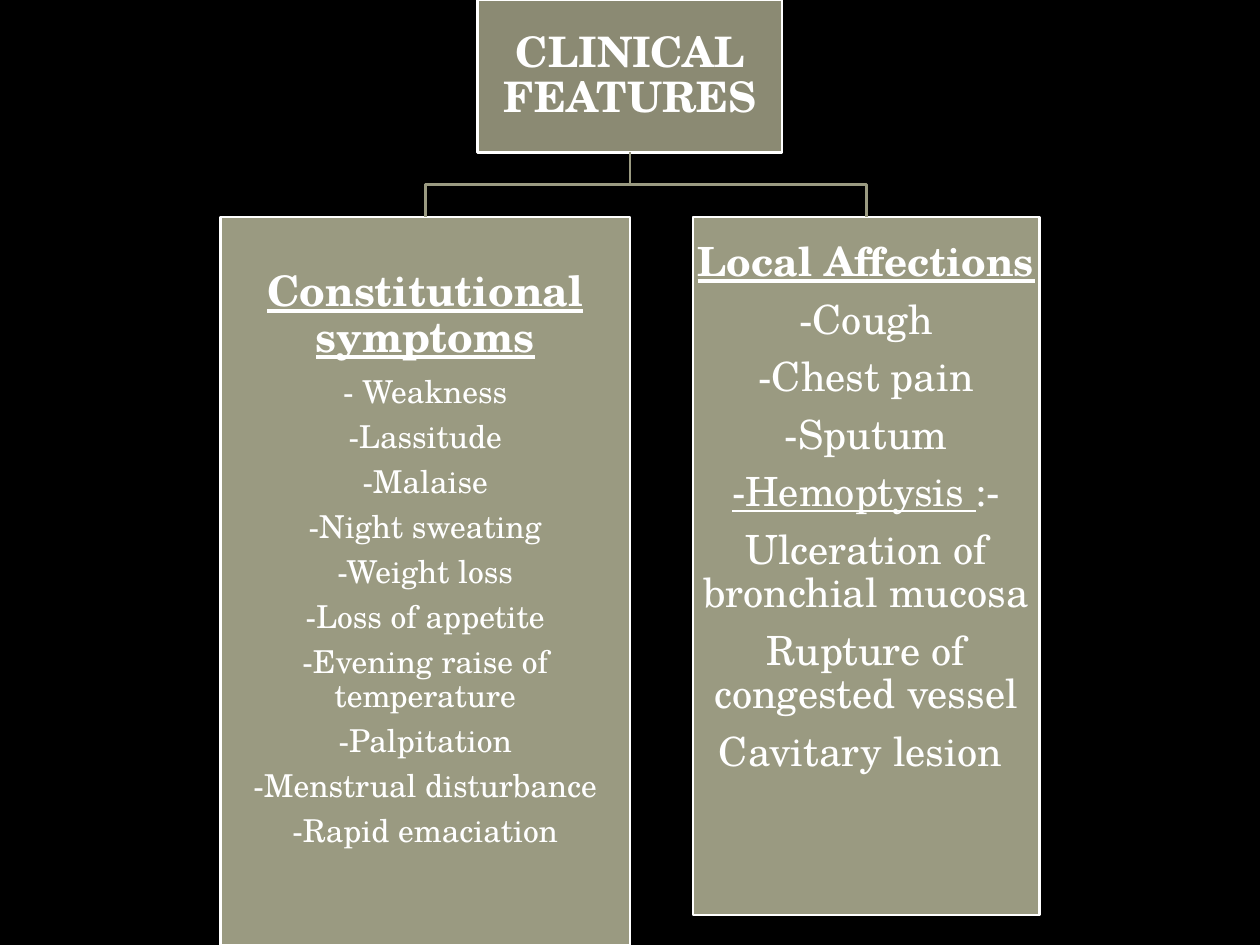
from pptx import Presentation
from pptx import util as u
from pptx.dml.color import RGBColor
from pptx.enum import shapes, text

BLACK = RGBColor(0x00, 0x00, 0x00)
WHITE = RGBColor(0xFF, 0xFF, 0xFF)
OLIVE = RGBColor(0x8B, 0x8A, 0x73)
SAGE = RGBColor(0x9A, 0x9A, 0x81)
FONT = "TeX Gyre Schola"
INSET = 1.2
HEADING = {"bold": True, "underline": True}
ITEM = {"bold": False, "underline": False}
UNDERLINED = {"bold": False, "underline": True}

SYMPTOMS = ["- Weakness", "-Lassitude", "-Malaise", "-Night sweating",
            "-Weight loss", "-Loss of appetite", "-Evening raise of temperature",
            "-Palpitation", "-Menstrual disturbance", "-Rapid emaciation"]
SIGNS = ["-Cough", "-Chest pain", "-Sputum"]
HEMOPTYSIS_CAUSES = ["Ulceration of bronchial mucosa",
                     "Rupture of congested vessel", "Cavitary lesion "]


def apply(target, values):
    for name, value in values.items():
        setattr(target, name, value)


def items(wordings, size):
    return [[(wording, size, ITEM)] for wording in wordings]


def add_box(slide, bounds, fill, lines, room_below=0):
    box = slide.shapes.add_shape(shapes.MSO_SHAPE.RECTANGLE, *map(u.Pt, bounds))
    box.shadow.inherit = False
    box.fill.solid()
    box.fill.fore_color.rgb = fill
    box.line.color.rgb = WHITE
    box.line.width = u.Pt(1.5)
    frame = box.text_frame
    apply(frame, {"word_wrap": True,
                  "vertical_anchor": text.MSO_ANCHOR.MIDDLE,
                  "margin_left": u.Pt(INSET), "margin_right": u.Pt(INSET),
                  "margin_top": u.Pt(INSET),
                  "margin_bottom": u.Pt(INSET + room_below)})
    for index, pieces in enumerate(lines):
        line = frame.add_paragraph() if index else frame.paragraphs[0]
        apply(line, {"alignment": text.PP_ALIGN.CENTER, "line_spacing": 0.9,
                     "space_after": u.Pt(round(0.35 * pieces[0][1], 2))})
        for wording, size, style in pieces:
            run = line.add_run()
            run.text = wording
            apply(run.font, {"name": FONT, "size": u.Pt(size), **style})
            run.font.color.rgb = WHITE
    return box


def add_branch(slide, parent, child):
    start_x = parent.left + parent.width // 2
    start_y = parent.top + parent.height
    end_x = child.left + child.width // 2
    bend_y = (start_y + child.top) // 2
    builder = slide.shapes.build_freeform(start_x, start_y)
    builder.add_line_segments(
        [(start_x, bend_y), (end_x, bend_y), (end_x, child.top)], close=False)
    branch = builder.convert_to_shape()
    branch.shadow.inherit = False
    branch.fill.background()
    branch.line.color.rgb = SAGE
    branch.line.width = u.Pt(1.5)


def main():
    deck = Presentation()
    apply(deck, {"slide_width": u.Pt(720), "slide_height": u.Pt(540)})
    slide = deck.slides.add_slide(deck.slide_layouts[6])
    slide.background.fill.solid()
    slide.background.fill.fore_color.rgb = BLACK

    features = add_box(slide, (273, 0, 174, 87), OLIVE,
                       [[("CLINICAL FEATURES", 24, {"bold": True})]])
    constitutional = add_box(
        slide, (126, 124, 234, 416), SAGE,
        [[("Constitutional symptoms", 24, HEADING)]] + items(SYMPTOMS, 18),
        room_below=24)
    local = add_box(
        slide, (396, 124, 198, 399), SAGE,
        [[("Local Affections", 23, HEADING)]] + items(SIGNS, 23)
        + [[("-Hemoptysis ", 23, UNDERLINED), (":-", 23, ITEM)]]
        + items(HEMOPTYSIS_CAUSES, 23),
        room_below=66)
    for group in (local, constitutional):
        add_branch(slide, features, group)

    deck.save("out.pptx")


if __name__ == "__main__":
    main()
